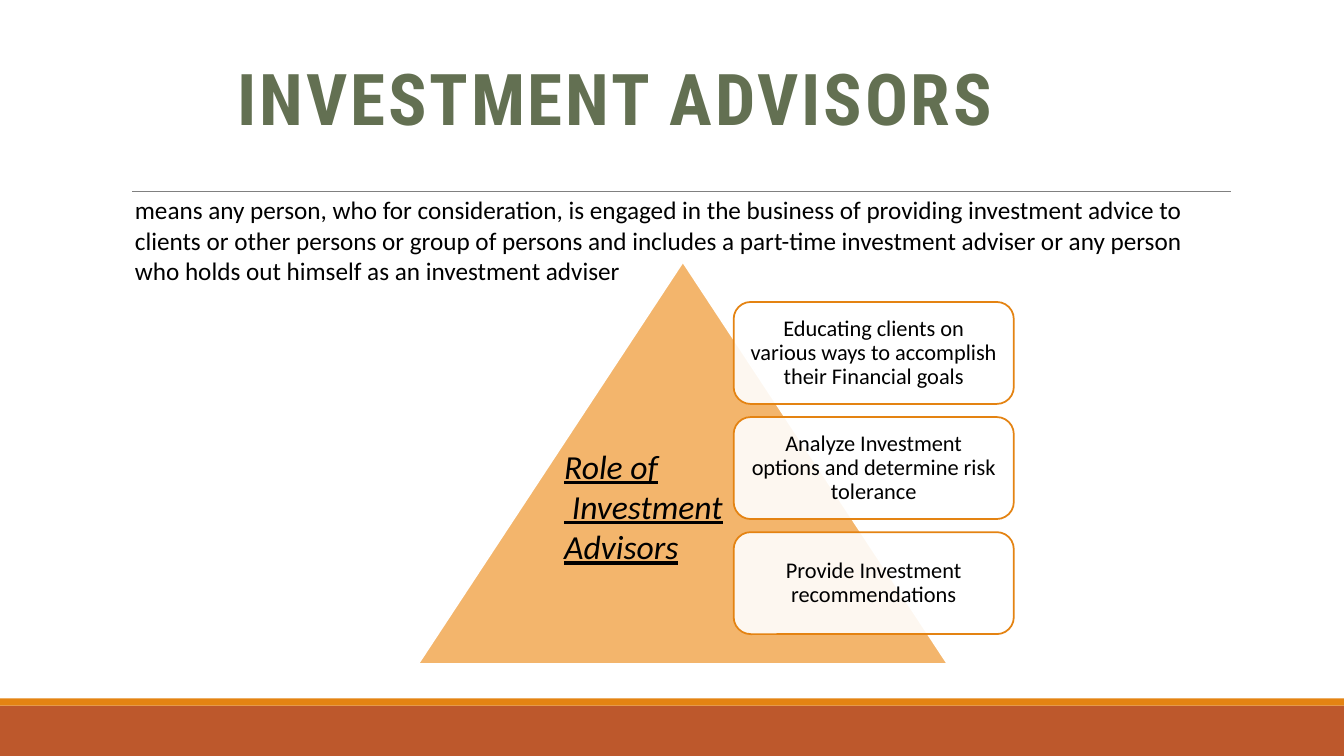
import pptx
import pptx.util
import pptx.dml.color
import pptx.enum.shapes
import pptx.enum.text
import pptx.oxml
import pptx.oxml.ns
from pptx.util import Cm

SHAPE = pptx.enum.shapes.MSO_SHAPE
ALIGN = pptx.enum.text.PP_ALIGN
ANCHOR = pptx.enum.text.MSO_ANCHOR

COLORS = {
    "rust": "BD582C",
    "orange": "E48312",
    "peach": "F3B56C",
    "rule": "808080",
    "title": "637052",
    "text": "000000",
    "white": "FFFFFF",
}
WIDTH, HEIGHT = 33.87, 19.05
ROLES = [
    "Educating clients on various ways to accomplish their Financial goals",
    "Analyze Investment options and determine risk tolerance",
    "Provide Investment recommendations",
]


def rgb(name):
    return pptx.dml.color.RGBColor.from_string(COLORS[name])


def add_child(parent, tag, **attrs):
    child = parent.makeelement(pptx.oxml.ns.qn(tag), attrs)
    parent.append(child)
    return child


def add_box(s, kind, box, fill, line=None):
    sp = s.shapes.add_shape(kind, *map(Cm, box))
    sp.shadow.inherit = False
    sp.fill.solid()
    sp.fill.fore_color.rgb = rgb(fill)
    if line:
        sp.line.color.rgb = rgb(line)
        sp.line.width = pptx.util.Pt(1.25)
    else:
        sp.line.fill.background()
    return sp


def write(sp, text, size, color="text", font="Calibri", align=ALIGN.LEFT,
          anchor=ANCHOR.TOP, spacing=1.0):
    tf = sp.text_frame
    tf.word_wrap = True
    tf.vertical_anchor = anchor
    tf.text = text
    for p in tf.paragraphs:
        p.alignment = align
        p.line_spacing = spacing
        for r in p.runs:
            r.font.size = pptx.util.Pt(size)
            r.font.name = font
            r.font.color.rgb = rgb(color)
    return [r for p in tf.paragraphs for r in p.runs]


def add_frame(s, box):
    """Bottom bands and the rule under the title."""
    left, top, width, height = box
    band, stripe = 1.27, 0.18
    bottom = top + height - band
    add_box(s, SHAPE.RECTANGLE, (left, bottom, width, band), "rust")
    add_box(s, SHAPE.RECTANGLE, (left, bottom - stripe, width, stripe), "orange")
    rule = s.shapes.add_connector(
        pptx.enum.shapes.MSO_CONNECTOR.STRAIGHT,
        Cm(left + 3.33), Cm(top + 4.83), Cm(left + 31.01), Cm(top + 4.83))
    rule.line.color.rgb = rgb("rule")
    rule.line.width = pptx.util.Pt(0.5)
    add_child(rule._element.spPr, "a:effectLst")


def add_title(s, box):
    sp = s.shapes.add_textbox(*map(Cm, box))
    for r in write(sp, "INVESTMENT ADVISORS", 51, "title", "Roboto Condensed",
                   ALIGN.CENTER, ANCHOR.BOTTOM, 0.85):
        r.font.bold = True
        r._r.get_or_add_rPr().set("spc", "200")


def add_definition(s, box):
    sp = s.shapes.add_textbox(*map(Cm, box))
    write(sp, "means any person, who for consideration, is engaged in the business "
              "of providing investment advice to clients or other persons or group "
              "of persons and includes a part-time investment adviser or any person "
              "who holds out himself as an investment adviser", 18)


def add_pyramid(s, box):
    """Triangle with a column of role cards and a caption."""
    left, top, width, height = box
    add_box(s, SHAPE.ISOSCELES_TRIANGLE, box, "peach", "white")

    # Role cards
    card_w, card_h, pitch = 7.06, 2.57, 2.9
    for i, role in enumerate(ROLES):
        card = add_box(s, SHAPE.ROUNDED_RECTANGLE,
                       (left + 7.95, top + 1.01 + i * pitch, card_w, card_h),
                       "white", "orange")
        fill = card._element.spPr.find(pptx.oxml.ns.qn("a:solidFill"))
        add_child(fill[0], "a:alpha", val="90000")
        tf = card.text_frame
        tf.margin_left = tf.margin_right = Cm(0.3)
        tf.margin_top = tf.margin_bottom = Cm(0.3)
        write(card, role, 16, align=ALIGN.CENTER, anchor=ANCHOR.MIDDLE, spacing=0.9)

    # Caption
    sp = s.shapes.add_textbox(Cm(left + 3.43), Cm(top + 4.5), Cm(5.66), Cm(3.33))
    for r in write(sp, "Role of\n Investment Advisors", 24):
        r.font.italic = True
        r.font.underline = True


def main():
    prs = pptx.Presentation()
    prs.slide_width, prs.slide_height = Cm(WIDTH), Cm(HEIGHT)
    s = prs.slides.add_slide(prs.slide_layouts[6])
    add_frame(s, (0, 0, WIDTH, HEIGHT))
    add_title(s, (0.23, 1.22, 30.56, 2.44))
    add_definition(s, (3.15, 4.78, 28.12, 2.57))
    add_pyramid(s, (10.54, 6.6, 13.34, 10.13))
    prs.save("out.pptx")


if __name__ == "__main__":
    main()
